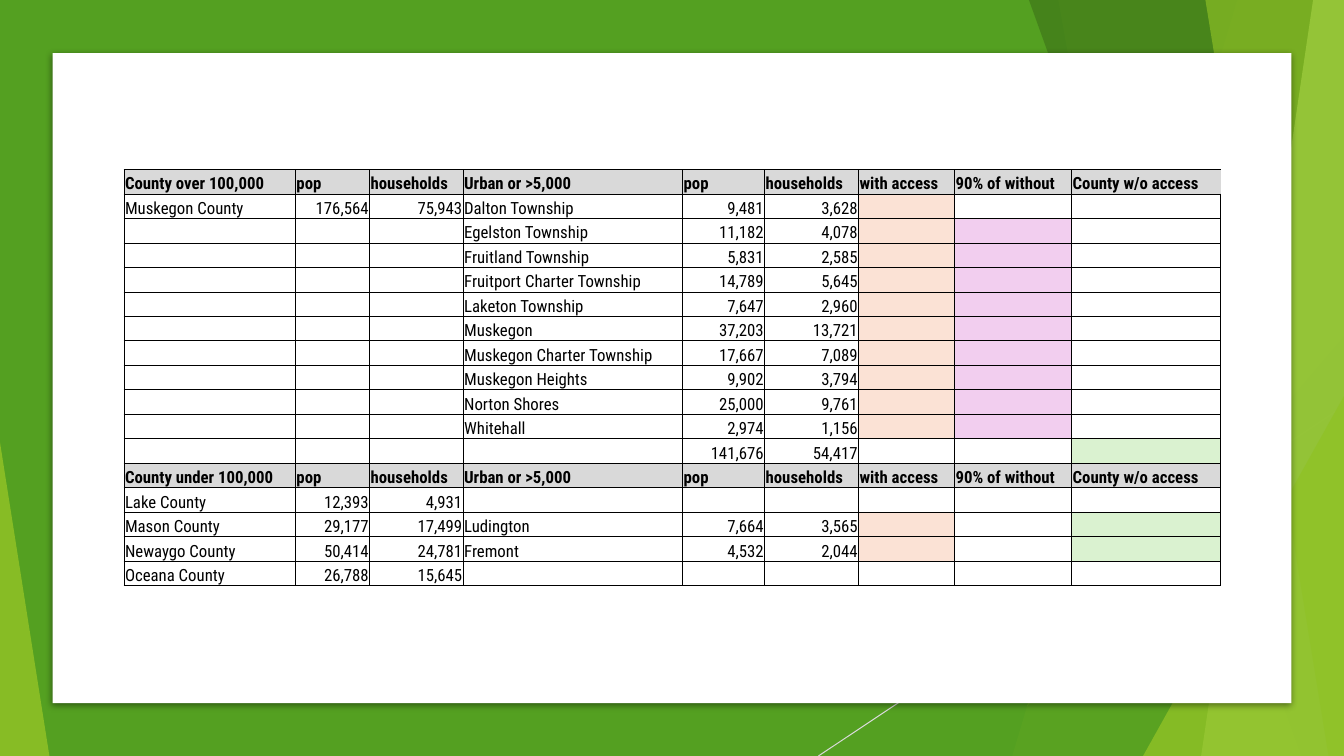
from lxml.etree import SubElement
from pptx import Presentation
from pptx.dml.color import RGBColor
from pptx.enum.shapes import MSO_CONNECTOR, MSO_SHAPE
from pptx.enum.text import MSO_ANCHOR, PP_ALIGN
from pptx.oxml.ns import qn
from pptx.util import Pt

WIDTH, HEIGHT = 960, 540
GREEN, LIME, DARK, PALE = "54A021", "90C226", "3F7819", "C0E474"
GREY, WHITE, BLACK = "D9D9D9", "FFFFFF", "000000"
# Letter used in a row's tints: column and colour
TINTS = {"o": (6, "FBE2D5"), "v": (7, "F2CEEF"), "g": (8, "DAF2D0")}

COLUMNS = [122.5, 53, 66.8, 156.8, 58.6, 67.1, 68.6, 83.6, 106.4]
ROW_HEIGHT = 17.5
HEADINGS = ["pop", "households", "Urban or >5,000", "pop", "households",
            "with access", "90% of without", "County w/o access"]
NO_COUNTY = ["", "", ""]
OVER = [
    (["Muskegon County", "176,564", "75,943", "Dalton Township", "9,481", "3,628"], "o"),
    (NO_COUNTY + ["Egelston Township", "11,182", "4,078"], "ov"),
    (NO_COUNTY + ["Fruitland Township", "5,831", "2,585"], "ov"),
    (NO_COUNTY + ["Fruitport Charter Township", "14,789", "5,645"], "ov"),
    (NO_COUNTY + ["Laketon Township", "7,647", "2,960"], "ov"),
    (NO_COUNTY + ["Muskegon", "37,203", "13,721"], "ov"),
    (NO_COUNTY + ["Muskegon Charter Township", "17,667", "7,089"], "ov"),
    (NO_COUNTY + ["Muskegon Heights", "9,902", "3,794"], "ov"),
    (NO_COUNTY + ["Norton Shores", "25,000", "9,761"], "ov"),
    (NO_COUNTY + ["Whitehall", "2,974", "1,156"], "ov"),
    (NO_COUNTY + ["", "141,676", "54,417"], "g"),
]
UNDER = [
    (["Lake County", "12,393", "4,931"], ""),
    (["Mason County", "29,177", "17,499", "Ludington", "7,664", "3,565"], "og"),
    (["Newaygo County", "50,414", "24,781", "Fremont", "4,532", "2,044"], "og"),
    (["Oceana County", "26,788", "15,645"], ""),
]
ROWS = [(["County over 100,000"] + HEADINGS, None), *OVER,
        (["County under 100,000"] + HEADINGS, None), *UNDER]


def rgb(color):
    return RGBColor.from_string(color)


class SlideBuilder:
    font = "Roboto Condensed"
    size = 12
    border = 0.5

    def __init__(self, slide):
        self.slide = slide

    def paint(self, sp, color, alpha):
        """Give a shape a plain fill of the given opacity in percent."""
        sp.shadow.inherit = False
        sp.fill.solid()
        sp.fill.fore_color.rgb = rgb(color)
        sp.line.fill.background()
        if alpha < 100:
            clr = sp.fill._xPr.find(".//" + qn("a:srgbClr"))
            SubElement(clr, qn("a:alpha"), val=str(alpha * 1000))
        return sp

    def shape(self, kind, x, y, w, h, color, alpha=100, adj=None):
        sp = self.slide.shapes.add_shape(kind, Pt(x), Pt(y), Pt(w), Pt(h))
        if adj is not None:
            sp.adjustments[0] = adj
        return self.paint(sp, color, alpha)

    def facet(self, top, bottom, color, alpha):
        """Fill from a slanted edge to the right side of the slide."""
        fb = self.slide.shapes.build_freeform(Pt(top), 0)
        fb.add_line_segments([(Pt(WIDTH), 0), (Pt(WIDTH), Pt(HEIGHT)), (Pt(bottom), Pt(HEIGHT))])
        return self.paint(fb.convert_to_shape(), color, alpha)

    def line(self, x1, y1, x2, y2, color, width):
        cn = self.slide.shapes.add_connector(MSO_CONNECTOR.STRAIGHT, Pt(x1), Pt(y1), Pt(x2), Pt(y2))
        cn.line.color.rgb = rgb(color)
        cn.line.width = Pt(width)
        SubElement(cn._element.spPr, qn("a:effectLst"))

    def drop_shadow(self, sp, blur, dist, alpha):
        effects = sp._element.spPr.find(qn("a:effectLst"))
        shadow = SubElement(effects, qn("a:outerShdw"), blurRad=str(Pt(blur)),
                            dist=str(Pt(dist)), dir="5400000", algn="t", rotWithShape="0")
        clr = SubElement(shadow, qn("a:srgbClr"), val=BLACK)
        SubElement(clr, qn("a:alpha"), val=str(alpha * 1000))

    def borders(self, cell, sides):
        tc_pr = cell._tc.get_or_add_tcPr()
        for side in "LRTB":
            ln = SubElement(tc_pr, qn("a:ln" + side), w=str(Pt(self.border)))
            if side in sides:
                SubElement(SubElement(ln, qn("a:solidFill")), qn("a:srgbClr"), val=BLACK)
            else:
                SubElement(ln, qn("a:noFill"))

    def cell(self, cell, text, fill, bold, sides):
        self.borders(cell, sides)
        if fill:
            cell.fill.solid()
            cell.fill.fore_color.rgb = rgb(fill)
        else:
            cell.fill.background()
        cell.margin_left = cell.margin_right = cell.margin_top = Pt(0.7)
        cell.margin_bottom = 0
        cell.vertical_anchor = MSO_ANCHOR.BOTTOM
        p = cell.text_frame.paragraphs[0]
        if not text:
            SubElement(p._p, qn("a:endParaRPr"), sz=str(self.size * 100))
            return
        is_number = text.replace(",", "").isdigit()
        p.alignment = PP_ALIGN.RIGHT if is_number else PP_ALIGN.LEFT
        r = p.add_run()
        r.text = text
        r.font.name = self.font
        r.font.size = Pt(self.size)
        r.font.bold = bold
        r.font.color.rgb = rgb(BLACK)

    def table(self, x, y, columns, row_height, rows):
        """Draw rows of (texts, tints); a row whose tints are None is a heading."""
        frame = self.slide.shapes.add_table(len(rows), len(columns), Pt(x), Pt(y),
                                            Pt(sum(columns)), Pt(row_height * len(rows)))
        tbl = frame.table
        tbl.first_row = tbl.horz_banding = False
        for column, width in zip(tbl.columns, columns):
            column.width = Pt(width)
        last = len(columns) - 1
        for i, (texts, tints) in enumerate(rows):
            tbl.rows[i].height = Pt(row_height)
            heading = tints is None
            fills = dict(TINTS[t] for t in tints or "")
            for j in range(len(columns)):
                text = texts[j] if j < len(texts) else ""
                fill = GREY if heading else fills.get(j)
                sides = "LTB" if (i, j) == (0, last) else "LRTB"
                self.cell(tbl.cell(i, j), text, fill, heading, sides)


def main():
    prs = Presentation()
    prs.slide_width, prs.slide_height = Pt(WIDTH), Pt(HEIGHT)
    s = SlideBuilder(prs.slides.add_slide(prs.slide_layouts[6]))
    triangle = MSO_SHAPE.ISOSCELES_TRIANGLE

    s.shape(MSO_SHAPE.RECTANGLE, 0, 0, WIDTH, HEIGHT, GREEN)
    s.line(WIDTH, 290, 584.6, HEIGHT, GREY, 0.75)
    s.facet(884, 723, LIME, 30)
    s.facet(756, 852, LIME, 20)
    s.shape(triangle, 703.5, 240, 256.5, 300, GREEN, 72, adj=1)
    s.facet(735, 929.5, DARK, 70)
    s.facet(938, 858, PALE, 70)
    s.facet(861, 949, LIME, 65)
    s.shape(triangle, 816.5, 283, 143.5, 257, LIME, 80, adj=1)
    s.shape(triangle, 0, 316, 35.3, 224, LIME, 85, adj=0)

    panel = s.shape(MSO_SHAPE.RECTANGLE, 37.5, 38, 885, 464.3, WHITE)
    s.drop_shadow(panel, blur=5, dist=1.4, alpha=43)
    s.table(88.6, 121, COLUMNS, ROW_HEIGHT, ROWS)
    prs.save("out.pptx")


if __name__ == "__main__":
    main()
